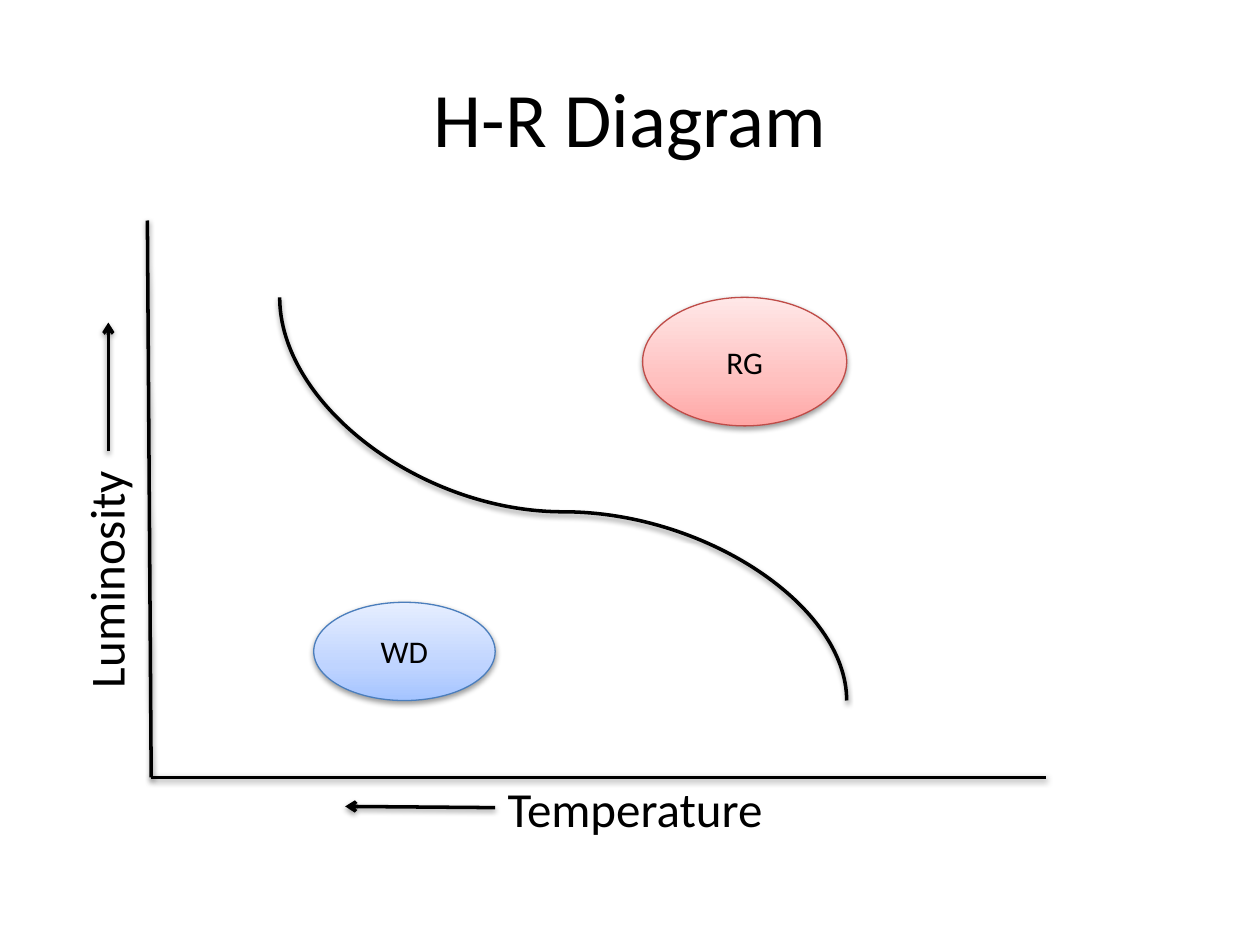
"""Build a slide with a Hertzsprung-Russell diagram of luminosity against temperature."""
from lxml import etree
from pptx import Presentation
from pptx.dml.color import RGBColor
from pptx.enum.shapes import MSO_CONNECTOR, MSO_SHAPE
from pptx.enum.text import MSO_ANCHOR, MSO_AUTO_SIZE, PP_ALIGN
from pptx.oxml import parse_xml
from pptx.oxml.ns import nsdecls, qn
from pptx.util import Inches, Pt

STRAIGHT, CURVE = MSO_CONNECTOR.STRAIGHT, MSO_CONNECTOR.CURVE
OVAL = MSO_SHAPE.OVAL
MIDDLE, CENTER = MSO_ANCHOR.MIDDLE, PP_ALIGN.CENTER
FIT_TEXT = MSO_AUTO_SIZE.SHAPE_TO_FIT_TEXT

COLORS = {
    "ink": "000000",
    "paper": "FFFFFF",
    "giant_edge": "BF4C48",
    "giant_fill": ["FFA6A5", "FFC0BF", "FFE7E7"],
    "dwarf_edge": "4B7EBC",
    "dwarf_fill": ["A4C4FF", "BFD4FF", "E6EEFF"],
}
STOPS = [0, 35000, 100000]
INK = RGBColor.from_string(COLORS["ink"])


def write(shape, text, size):
    frame = shape.text_frame
    frame.word_wrap = True
    frame.text = text
    font = frame.paragraphs[0].font
    font.name, font.size = "Calibri", Pt(size)
    font.color.rgb = INK
    return frame


def add_shadow(shape):
    shape._element.spPr.append(parse_xml(
        f'<a:effectLst {nsdecls("a")}>'
        '<a:outerShdw blurRad="40000" dist="20000" dir="5400000" rotWithShape="0">'
        f'<a:srgbClr val="{COLORS["ink"]}"><a:alpha val="38000"/></a:srgbClr>'
        '</a:outerShdw></a:effectLst>'))


prs = Presentation()
prs.slide_width, prs.slide_height = Inches(10), Inches(7.5)
slide = prs.slides.add_slide(prs.slide_layouts[6])
shapes = slide.shapes

title = shapes.add_textbox(Inches(0.5), Inches(0.3), Inches(9), Inches(1.25))
title.fill.solid()
title.fill.fore_color.rgb = RGBColor.from_string(COLORS["paper"])
paper = title._element.spPr.find(".//" + qn("a:srgbClr"))
etree.SubElement(paper, qn("a:alpha")).set("val", "70000")
heading = write(title, "H-R Diagram", 44)
heading.vertical_anchor = MIDDLE
heading.paragraphs[0].alignment = CENTER

for name, left, top, width, turn in [
    ("Luminosity", -0.16, 4.28, 1.99, 270),
    ("Temperature", 3.93, 6.13, 3.25, 0),
]:
    axis_label = shapes.add_textbox(Inches(left), Inches(top), Inches(width), Inches(0.57))
    axis_label.rotation = turn
    write(axis_label, name, 28).auto_size = FIT_TEXT

for kind, x1, y1, x2, y2, has_head in [
    (STRAIGHT, 1.17, 1.75, 1.2, 6.17, False),
    (STRAIGHT, 1.2, 6.17, 8.3, 6.17, False),
    (STRAIGHT, 0.86, 3.58, 0.86, 2.56, True),
    (STRAIGHT, 3.93, 6.41, 2.74, 6.4, True),
    (CURVE, 6.07, 1.71, 2.87, 6.21, False),
]:
    stroke = shapes.add_connector(kind, Inches(x1), Inches(y1), Inches(x2), Inches(y2))
    stroke.line.color.rgb = INK
    stroke.line.width = Pt(2)
    properties = stroke._element.spPr
    if has_head:
        etree.SubElement(properties.find(qn("a:ln")), qn("a:tailEnd")).set("type", "arrow")
    if kind == CURVE:
        properties.find(qn("a:xfrm")).set("rot", "16200000")
        bends = properties.find(".//" + qn("a:avLst"))
        etree.SubElement(bends, qn("a:gd"), name="adj1", fmla="val 53200")
    add_shadow(stroke)

for name, star, left, top, width, height in [
    ("RG", "giant", 5.1, 2.36, 1.62, 1.02),
    ("WD", "dwarf", 2.49, 4.78, 1.44, 0.78),
]:
    region = shapes.add_shape(OVAL, Inches(left), Inches(top), Inches(width), Inches(height))
    region.fill.gradient()
    region.fill.gradient_angle = 90
    stops = region._element.spPr.find(".//" + qn("a:gsLst"))
    for old_stop in list(stops):
        stops.remove(old_stop)
    for position, tint in zip(STOPS, COLORS[star + "_fill"]):
        stop = etree.SubElement(stops, qn("a:gs"), pos=str(position))
        etree.SubElement(stop, qn("a:srgbClr"), val=tint)
    region.line.color.rgb = RGBColor.from_string(COLORS[star + "_edge"])
    region.line.width = Pt(0.75)
    add_shadow(region)
    region_text = write(region, name, 18)
    region_text.vertical_anchor = MIDDLE
    region_text.paragraphs[0].alignment = CENTER

prs.save("out.pptx")
